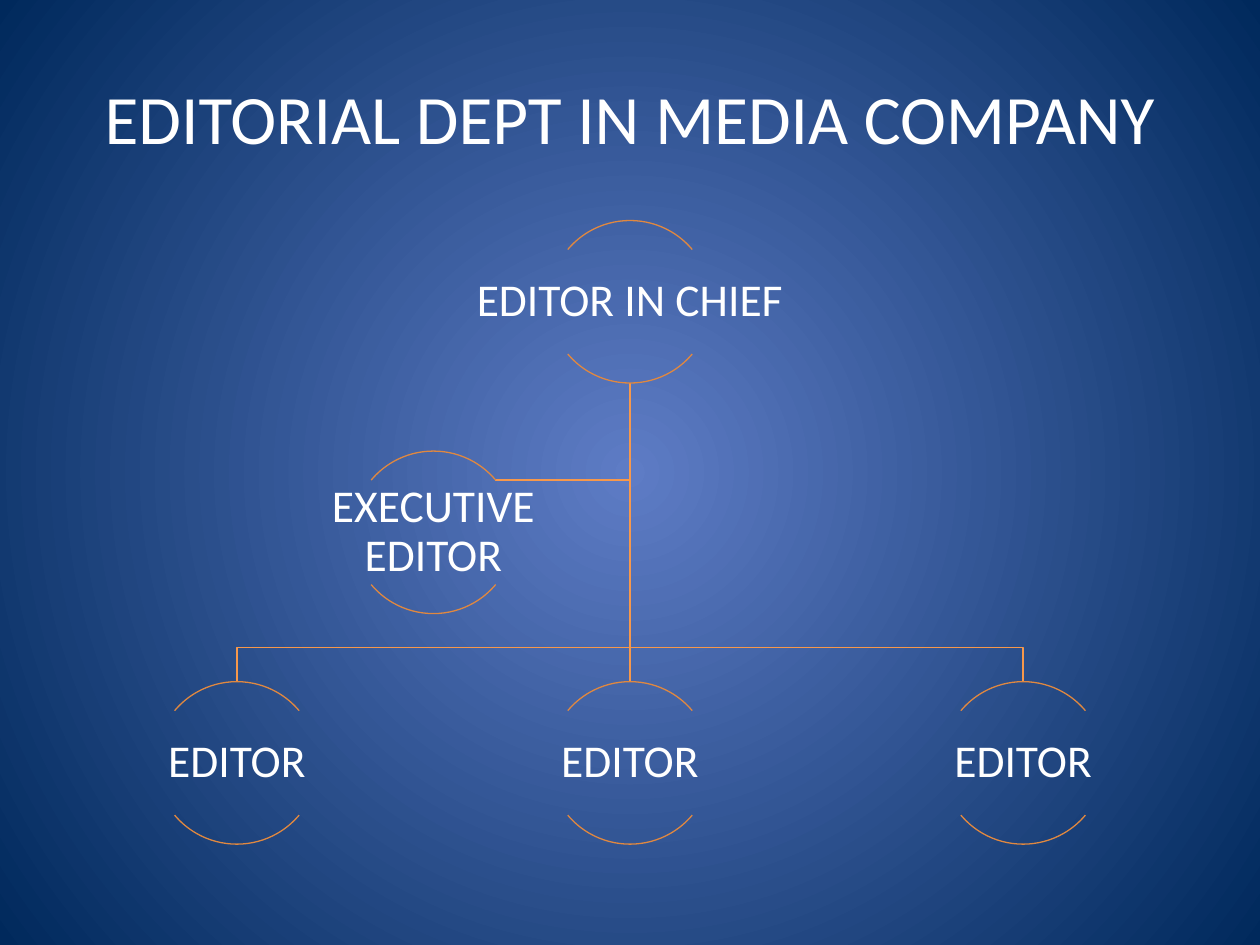
from lxml import etree
from pptx import Presentation
from pptx import util as u
from pptx.dml.color import RGBColor
from pptx.enum import shapes, text
from pptx.oxml.ns import qn

MIDDLE = 5
COLUMN_STEP = 3.12
TOP = 1.75
ROW_STEP = 1.83
DIAMETER = 1.29
LABEL_WIDTH, LABEL_HEIGHT = 2.58, 0.82
UPPER_ARC, LOWER_ARC = (132, 192), (24, 84)
CHIEF_BOTTOM = TOP + DIAMETER
EDITOR_TOP = TOP + 2 * ROW_STEP
BRANCH_Y = 5.14


def color(value):
    return RGBColor.from_string(value)


def apply(target, values):
    for name, value in values.items():
        setattr(target, name, value)


def set_line(shape, value):
    shape.line.color.rgb = color(value)
    shape.line.width = u.Pt(0.75)


def paint_background(page, inner, outer):
    fill = page.background.fill
    fill.gradient()
    for stop, value, position in zip(fill.gradient_stops, (inner, outer), (0, 1)):
        stop.color.rgb = color(value)
        stop.position = position
    linear = page.element.find(".//" + qn("a:lin"))
    radial = etree.Element(qn("a:path"), {"path": "circle"})
    sides = {side: "50000" for side in "ltrb"}
    etree.SubElement(radial, qn("a:fillToRect"), sides)
    linear.getparent().replace(linear, radial)


def add_label(page, words, place, size, frame_format, para_format):
    box = page.shapes.add_textbox(*map(u.Inches, place))
    frame = box.text_frame
    apply(frame, {"word_wrap": True,
                  "vertical_anchor": text.MSO_ANCHOR.MIDDLE, **frame_format})
    para = frame.paragraphs[0]
    apply(para, {"alignment": text.PP_ALIGN.CENTER, **para_format})
    span = para.add_run()
    span.text = words
    apply(span.font, {"name": "Calibri", "size": u.Pt(size)})
    span.font.color.rgb = color("FFFFFF")


def add_bent_line(page, points):
    start, *rest = [tuple(map(u.Inches, point)) for point in points]
    builder = page.shapes.build_freeform(*start)
    builder.add_line_segments(rest, close=False)
    shape = builder.convert_to_shape()
    shape.shadow.inherit = False
    shape.fill.background()
    set_line(shape, "F7984B")


def add_straight_line(page, start, end):
    line = page.shapes.add_connector(
        shapes.MSO_CONNECTOR.STRAIGHT, *map(u.Inches, start + end))
    etree.SubElement(line._element.spPr, qn("a:effectLst"))
    set_line(line, "F7984B")


def add_arc(page, center, top, angles):
    place = (center - DIAMETER / 2, top, DIAMETER, DIAMETER)
    arc = page.shapes.add_shape(shapes.MSO_SHAPE.ARC, *map(u.Inches, place))
    arc.shadow.inherit = False
    arc.fill.background()
    for index, angle in enumerate(angles):
        arc.adjustments[index] = angle
    set_line(arc, "E08840")


def add_role(page, words, center, top):
    for angles in (UPPER_ARC, LOWER_ARC):
        add_arc(page, center, top, angles)
    place = (center - LABEL_WIDTH / 2, top + (DIAMETER - LABEL_HEIGHT) / 2,
             LABEL_WIDTH, LABEL_HEIGHT)
    margins = {f"margin_{side}": u.Inches(0.02)
               for side in ("left", "top", "right", "bottom")}
    add_label(page, words, place, 26, margins, {"line_spacing": 0.9})


def main():
    deck = Presentation()
    deck.slide_width, deck.slide_height = u.Inches(10), u.Inches(7.5)
    page = deck.slides.add_slide(deck.slide_layouts[6])
    paint_background(page, "5E7CC5", "00295C")
    add_label(page, "EDITORIAL DEPT IN MEDIA COMPANY", (0.5, 0.3, 9, 1.25),
              39.6, {}, {})

    left, right = MIDDLE - COLUMN_STEP, MIDDLE + COLUMN_STEP
    trunk = (MIDDLE, CHIEF_BOTTOM)
    add_bent_line(page, [trunk, (MIDDLE, 3.81), (3.93, 3.81)])
    add_bent_line(page, [trunk, (MIDDLE, BRANCH_Y), (right, BRANCH_Y),
                         (right, EDITOR_TOP)])
    add_straight_line(page, trunk, (MIDDLE, EDITOR_TOP))
    add_bent_line(page, [trunk, (MIDDLE, BRANCH_Y), (left, BRANCH_Y),
                         (left, EDITOR_TOP)])

    add_role(page, "EDITOR IN CHIEF", MIDDLE, TOP)
    for center in (left, MIDDLE, right):
        add_role(page, "EDITOR", center, EDITOR_TOP)
    add_role(page, "EXECUTIVE EDITOR", MIDDLE - COLUMN_STEP / 2, TOP + ROW_STEP)
    deck.save("out.pptx")


if __name__ == "__main__":
    main()
